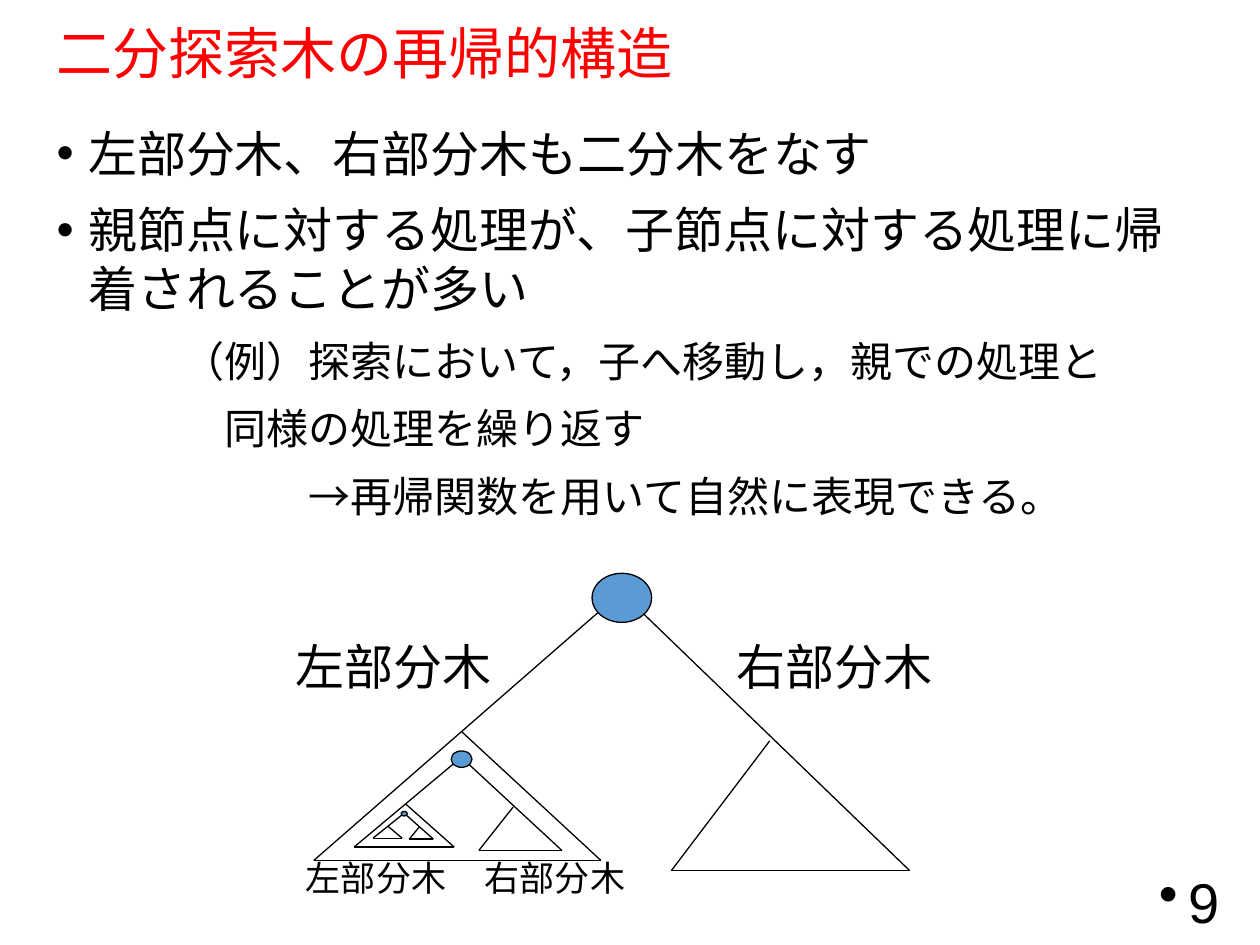
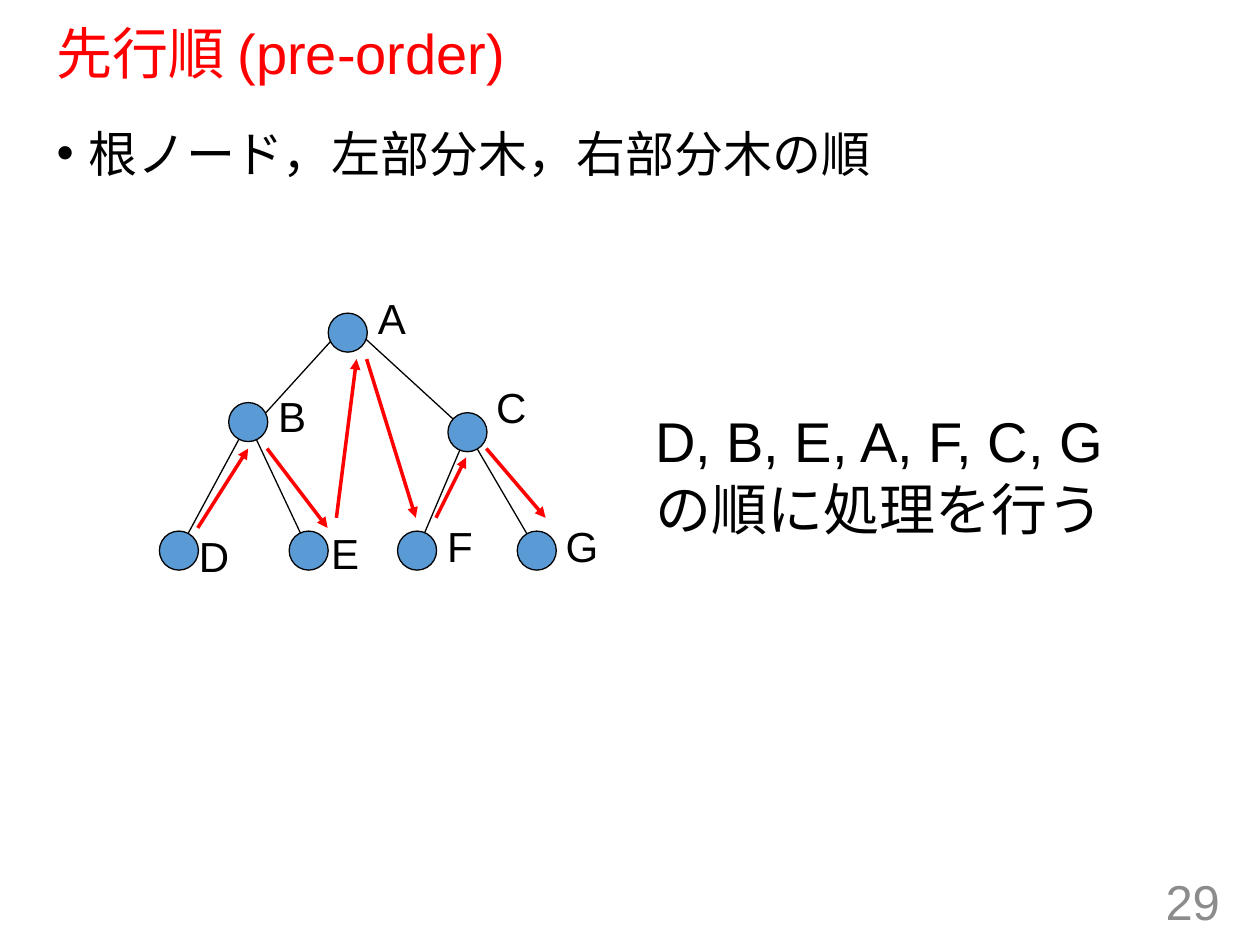
import pptx
import pptx.util
import pptx.dml.color
import pptx.enum.shapes
import pptx.enum.text
import pptx.oxml.ns
import lxml.etree

Inches = pptx.util.Inches
Pt = pptx.util.Pt
RGB = pptx.dml.color.RGBColor
Align = pptx.enum.text.PP_ALIGN
Anchor = pptx.enum.text.MSO_ANCHOR
qn = pptx.oxml.ns.qn

RED = RGB(0xFF, 0x00, 0x00)
BLACK = RGB(0x00, 0x00, 0x00)
BLUE = RGB(0x5B, 0x9B, 0xD5)
GRAY = RGB(0x8C, 0x8C, 0x8C)
FONT = "Arial"


class Deck:
    def __init__(self):
        self.prs = pptx.Presentation()
        self.prs.slide_width = Inches(10)
        self.prs.slide_height = Inches(7.5)
        self.slide = None

    def style(self, para, size, color=BLACK):
        para.font.name = FONT
        para.font.size = Pt(size)
        para.font.color.rgb = color

    def place(self, shape, box):
        shape.left, shape.top, shape.width, shape.height = map(Inches, box)

    def bullet(self, para, mark, left=0, hang=0):
        """Set the bullet sign (None for no bullet) and the indents."""
        props = para._p.get_or_add_pPr()
        props.set("marL", str(Inches(left)))
        props.set("indent", str(-Inches(hang)))
        if mark:
            lxml.etree.SubElement(props, qn("a:buChar"), char=mark)
        else:
            lxml.etree.SubElement(props, qn("a:buNone"))

    def start(self, title):
        """Add a slide with its title."""
        self.slide = self.prs.slides.add_slide(self.prs.slide_layouts[1])
        head = self.slide.shapes.title
        self.place(head, (0.35, 0.19, 9.25, 0.51))
        frame = head.text_frame
        frame.text = title
        frame.auto_size = pptx.enum.text.MSO_AUTO_SIZE.NONE
        frame.vertical_anchor = Anchor.MIDDLE
        para = frame.paragraphs[0]
        para.alignment = Align.LEFT
        para.line_spacing = 0.9
        self.style(para, 32, RED)

    def body(self, box, points, notes=()):
        """Fill the body with bulleted points, then (indent, text) notes."""
        holder = self.slide.placeholders[1]
        self.place(holder, box)
        frame = holder.text_frame
        frame.auto_size = pptx.enum.text.MSO_AUTO_SIZE.NONE
        rows = [(text, "•", 0.25, 0.25, 28) for text in points]
        rows += [(text, None, left, 0, 24) for left, text in notes]
        for i, (text, mark, left, hang, size) in enumerate(rows):
            para = frame.add_paragraph() if i else frame.paragraphs[0]
            para.text = text
            self.bullet(para, mark, left, hang)
            para.space_before = Pt(10 if i else 0)
            self.style(para, size)

    def text(self, box, lines, size, color=BLACK):
        shape = self.slide.shapes.add_textbox(*map(Inches, box))
        frame = shape.text_frame
        frame.word_wrap = False
        frame.text = lines
        for para in frame.paragraphs:
            self.style(para, size, color)
        return frame

    def number(self, text, size, color, mark=None):
        frame = self.text((7.53, 6.95, 2.25, 0.4), text, size, color)
        frame.word_wrap = True
        frame.vertical_anchor = Anchor.MIDDLE
        para = frame.paragraphs[0]
        para.alignment = Align.RIGHT
        if mark:
            # The bullet must precede the font element already set.
            props = para._p.get_or_add_pPr()
            sign = lxml.etree.Element(qn("a:buChar"), char=mark)
            props.insert(0, sign)

    def line(self, start, end, color=BLACK, width=0.75, arrow=False):
        link = self.slide.shapes.add_connector(
            pptx.enum.shapes.MSO_CONNECTOR.STRAIGHT,
            *map(Inches, (*start, *end)))
        link.line.color.rgb = color
        link.line.width = Pt(width)
        props = link._element.spPr
        if arrow:
            lxml.etree.SubElement(props.find(qn("a:ln")), qn("a:tailEnd"),
                                  type="triangle")
        lxml.etree.SubElement(props, qn("a:effectLst"))

    def node(self, box):
        dot = self.slide.shapes.add_shape(
            pptx.enum.shapes.MSO_SHAPE.OVAL, *map(Inches, box))
        dot.shadow.inherit = False
        dot.fill.solid()
        dot.fill.fore_color.rgb = BLUE
        dot.line.color.rgb = BLACK
        dot.line.width = Pt(0.75)

    def tree(self, left, top, width, height):
        """Draw a root over two triangles, scaled to the given frame."""
        def spot(across, down):
            return left + across * width / 100, top + down * height / 100

        root = spot(51.6, 6.4)
        right, inner = spot(100, 100), spot(60, 100)
        low, end = spot(0, 96.6), spot(48.2, 96.6)
        for start, stop in ((root, right), (spot(76.5, 56.4), inner),
                            (inner, right), (root, low),
                            (spot(24.9, 53.4), end), (low, end)):
            self.line(start, stop)
        self.node((*spot(46.7, 0), 0.1 * width, 0.165 * height))


def nested(deck):
    deck.start("二分探索木の再帰的構造")
    deck.body((0.35, 0.93, 9.25, 5.83),
              ("左部分木、右部分木も二分木をなす",
               "親節点に対する処理が、子節点に対する処理に帰着されることが多い"),
              ((1, "（例）探索において，子へ移動し，親での処理と"),
               (1.33, "同様の処理を繰り返す"),
               (2, "→再帰関数を用いて自然に表現できる。")))
    deck.number("9", 32, BLACK, "•")
    for frame in ((2.49, 4.55, 4.73, 2.36), (2.81, 5.96, 1.65, 0.79),
                  (2.96, 6.44, 0.48, 0.22)):
        deck.tree(*frame)
    deck.text((5.75, 5, 1.76, 0.57), "右部分木", 28)
    deck.text((2.25, 5, 1.76, 0.57), "左部分木", 28)
    deck.text((3.75, 6.75, 1.31, 0.43), "右部分木", 20)
    deck.text((2.33, 6.75, 1.31, 0.43), "左部分木", 20)


def order(deck):
    deck.start("先行順 (pre-order)")
    deck.body((0.35, 0.93, 8.73, 1.22), ("根ノード，左部分木，右部分木の順",))
    # Each node: its centre, then the corner of its label.
    nodes = {"A": ((2.76, 2.64), (2.9, 2.27)),
             "B": ((1.97, 3.35), (2.11, 3.05)),
             "C": ((3.71, 3.43), (3.84, 2.98)),
             "D": ((1.42, 4.37), (1.48, 4.16)),
             "E": ((2.45, 4.37), (2.53, 4.14)),
             "F": ((3.31, 4.37), (3.45, 4.08)),
             "G": ((4.26, 4.37), (4.39, 4.08))}
    for end in ((1.97, 3.43), (3.71, 3.43)):
        deck.line((2.76, 2.56), end)
    for start, end in ("BD", "BE", "CF", "CG"):
        deck.line(nodes[start][0], nodes[end][0])
    side = 0.31
    for (x, y), _ in nodes.values():
        deck.node((x - side / 2, y - side / 2, side, side))
    for name, (_, corner) in nodes.items():
        deck.text((*corner, 0.44, 0.5), name, 24)
    deck.text((5.1, 3.18, 3.79, 1.18),
              "D, B, E, A, F, C, G\nの順に処理を行う", 32)
    for start, end in (((1.57, 4.19), (1.97, 3.56)),
                       ((2.12, 3.56), (2.6, 4.19)),
                       ((2.67, 4.11), (2.83, 2.85)),
                       ((2.91, 2.85), (3.3, 4.11)),
                       ((3.46, 4.11), (3.7, 3.63)),
                       ((3.86, 3.56), (4.33, 4.11))):
        deck.line(start, end, RED, 2, arrow=True)
    deck.number("29", 28, GRAY)


def main():
    deck = Deck()
    nested(deck)
    order(deck)
    deck.prs.save("out.pptx")


if __name__ == "__main__":
    main()
